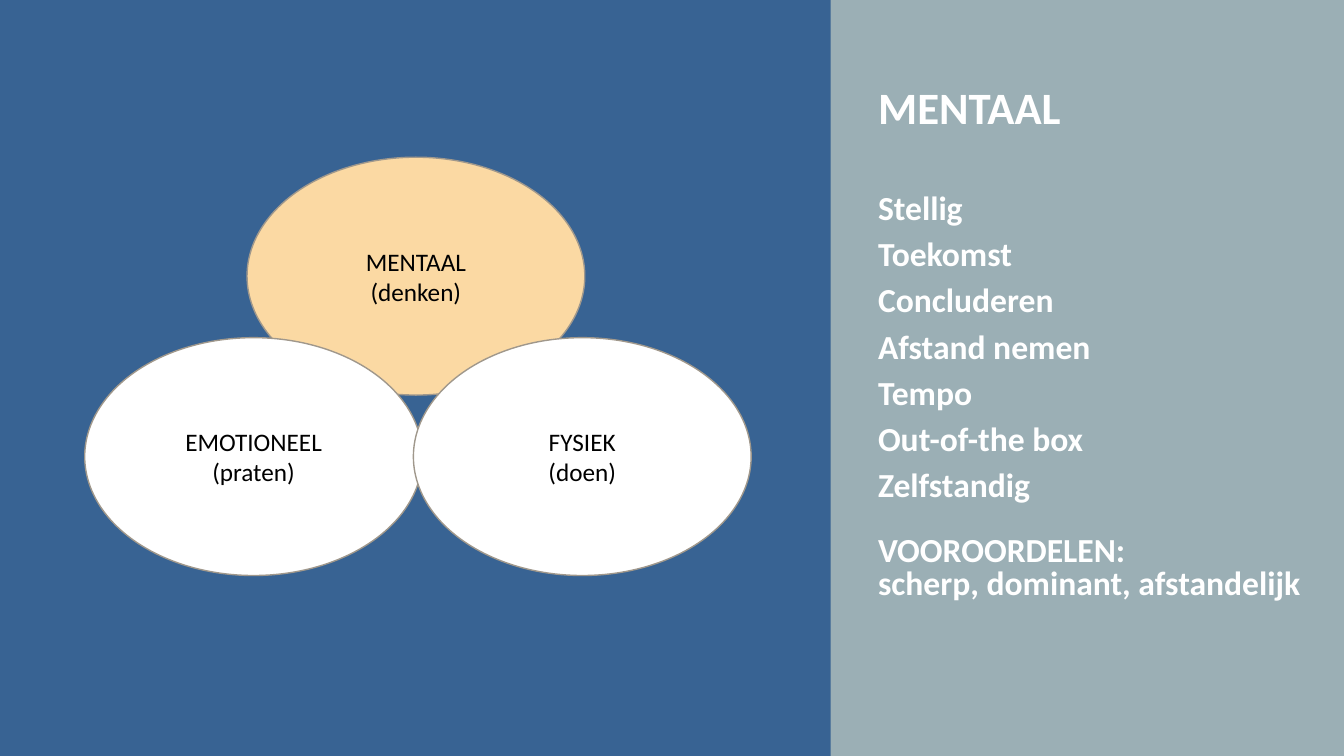
from pptx import Presentation
from pptx import util as u
from pptx.dml.color import RGBColor
from pptx.enum import shapes, text

COLORS = {
    "background": "9BAFB5",
    "panel": "386393",
    "highlight": "FBD9A3",
    "white": "FFFFFF",
    "outline": "A0988C",
    "black": "000000",
}
FONT = "Calibri"
TRAITS = ["Stellig", "Toekomst", "Concluderen", "Afstand nemen",
          "Tempo", "Out-of-the box", "Zelfstandig"]
PREJUDICES = "VOOROORDELEN:\vscherp, dominant, afstandelijk"
ELLIPSES = [
    (2.45, 1.56, "MENTAAL\v(denken)", "highlight"),
    (0.84, 3.35, "EMOTIONEEL\v(praten)", "white"),
    (4.1, 3.35, "FYSIEK\v(doen)", "white"),
]


class SlideBuilder:
    """Draws styled elements on one slide."""

    def __init__(self, prs):
        self.s = prs.slides.add_slide(prs.slide_layouts[5])
        fill = self.s.background.fill
        fill.solid()
        fill.fore_color.rgb = self.color("background")

    def color(self, name):
        return RGBColor.from_string(COLORS[name])

    def box(self, left, top, width, height):
        return [u.Inches(v) for v in (left, top, width, height)]

    def style_text(self, p, content, size, color, bold=False, align=text.PP_ALIGN.LEFT):
        p.text = content
        p.alignment = align
        for r in p.runs:
            r.font.name = FONT
            r.font.size = u.Pt(size)
            r.font.bold = bold
            r.font.color.rgb = self.color(color)

    def shape(self, kind, bounds, fill, outline=None):
        sp = self.s.shapes.add_shape(kind, *self.box(*bounds))
        sp.shadow.inherit = False
        sp.fill.solid()
        sp.fill.fore_color.rgb = self.color(fill)
        if outline:
            sp.line.color.rgb = self.color(outline)
            sp.line.width = u.Pt(1)
        else:
            sp.line.fill.background()
        return sp

    def ellipse(self, left, top, label, fill):
        sp = self.shape(shapes.MSO_SHAPE.OVAL, (left, top, 3.35, 2.36), fill, "outline")
        tf = sp.text_frame
        tf.vertical_anchor = text.MSO_ANCHOR.MIDDLE
        self.style_text(tf.paragraphs[0], label, 18, "black", align=text.PP_ALIGN.CENTER)

    def title(self, content, bounds):
        sp = self.s.shapes.title
        sp.left, sp.top, sp.width, sp.height = self.box(*bounds)
        tf = sp.text_frame
        tf.vertical_anchor = text.MSO_ANCHOR.TOP
        tf.auto_size = text.MSO_AUTO_SIZE.NONE
        self.style_text(tf.paragraphs[0], content, 32, "white", bold=True)

    def trait_list(self, traits, closing, bounds):
        tf = self.s.shapes.add_textbox(*self.box(*bounds)).text_frame
        tf.word_wrap = True
        for i, content in enumerate([*traits, closing]):
            p = tf.add_paragraph() if i else tf.paragraphs[0]
            self.style_text(p, content, 24, "white", bold=True)
            p.line_spacing = 0.8
            p.space_before = u.Pt(10 if i else 0)
        p.space_before = u.Pt(23.4)


def main():
    prs = Presentation()
    prs.slide_width, prs.slide_height = u.Inches(13.33), u.Inches(7.5)
    slide = SlideBuilder(prs)
    slide.shape(shapes.MSO_SHAPE.RECTANGLE, (0, 0, 8.24, 7.5), "panel")
    for ellipse in ELLIPSES:
        slide.ellipse(*ellipse)
    slide.trait_list(TRAITS, PREJUDICES, (8.61, 1.88, 4.72, 4.45))
    slide.title("MENTAAL", (8.61, 0.74, 2.51, 0.64))
    prs.save("out.pptx")


if __name__ == "__main__":
    main()
